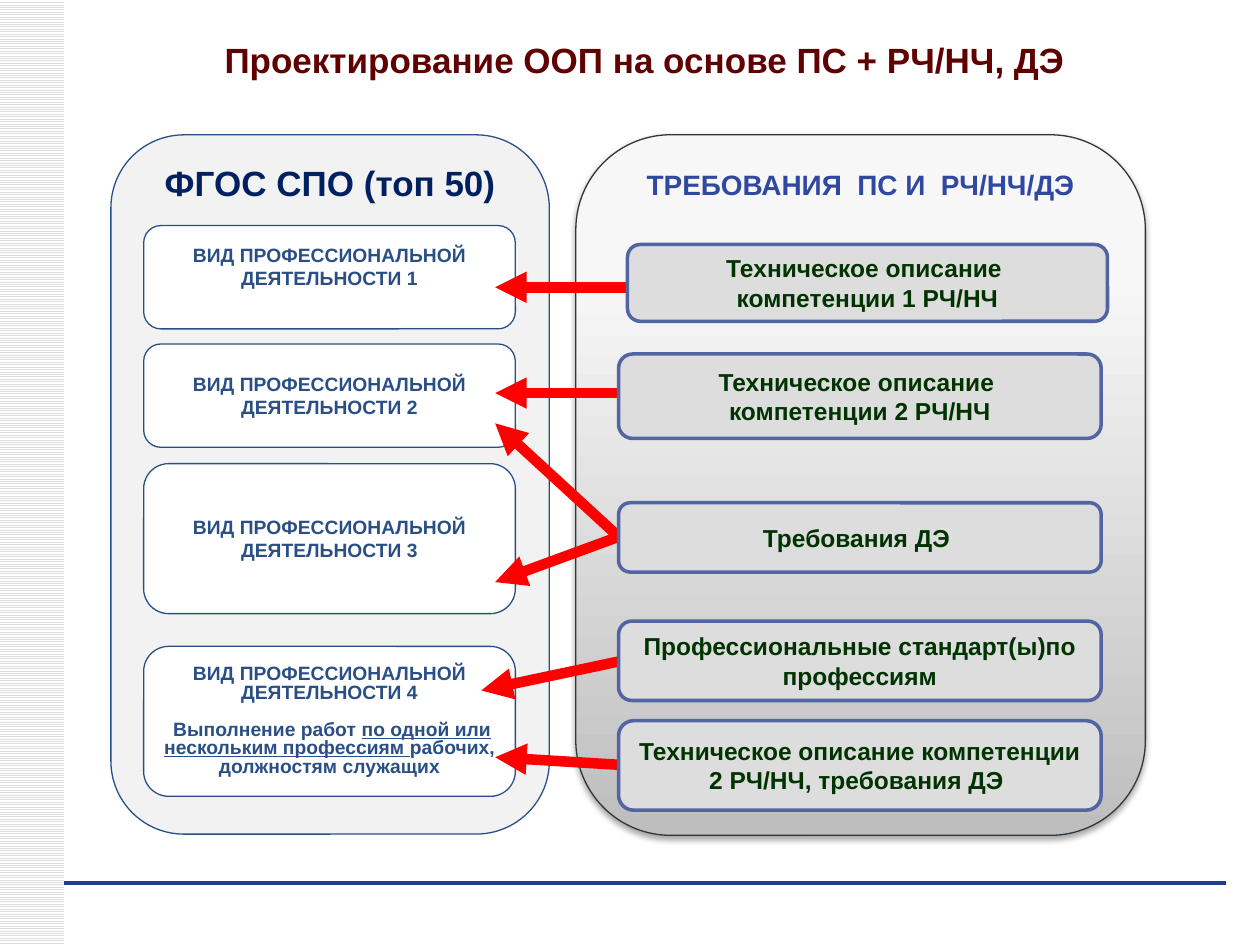
from pptx import Presentation
from pptx.dml.color import RGBColor
from pptx.enum.dml import MSO_PATTERN
from pptx.enum.shapes import MSO_CONNECTOR, MSO_SHAPE
from pptx.enum.text import MSO_ANCHOR as ANCHOR, PP_ALIGN as ALIGN
from pptx.oxml import parse_xml
from pptx.oxml.ns import nsdecls
from pptx.util import Inches, Pt

# Content: a paragraph is a list of (text, underlined) runs or a plain string
TITLE = "Проектирование ООП на основе ПС + РЧ/НЧ, ДЭ "
LEFT_HEAD = "ФГОС СПО (топ 50)"
RIGHT_HEAD = "ТРЕБОВАНИЯ  ПС И  РЧ/НЧ/ДЭ"
KIND = "ВИД ПРОФЕССИОНАЛЬНОЙ ДЕЯТЕЛЬНОСТИ "
WORK = [(" Выполнение работ ", False),
        ("по одной или нескольким профессиям ", True),
        ("рабочих, должностям служащих", False)]

# Left cards: top, height, paragraphs, text format
CARDS = [
    (1.79, 0.82, [KIND + "1"], {"foot": 0.22}),
    (2.73, 0.82, [KIND + "2"], {}),
    (3.68, 1.19, [KIND + "3"], {}),
    (5.13, 1.19, [KIND + "4", WORK], {"spacing": 0.8, "gap": 10.5}),
]
# Right boxes: left, top, width, height, paragraphs
DESC = "Техническое описание "
BOXES = [
    (4.98, 1.94, 3.81, 0.61, [DESC, "компетенции 1 РЧ/НЧ"]),
    (4.91, 2.81, 3.83, 0.67, [DESC, "компетенции 2 РЧ/НЧ"]),
    (4.91, 3.99, 3.83, 0.55, ["Требования ДЭ "]),
    (4.91, 4.93, 3.83, 0.63, ["Профессиональные стандарт(ы)по профессиям"]),
    (4.91, 5.72, 3.83, 0.71,
     [DESC + "компетенции 2 РЧ/НЧ, требования ДЭ "]),
]
# Arrows: index of the box, start y, end x, end y
ARROWS = [
    (0, 2.28, 3.93, 2.28),
    (1, 3.12, 3.93, 3.12),
    (2, 4.26, 3.93, 3.36),
    (2, 4.26, 3.93, 4.62),
    (3, 5.25, 3.82, 5.48),
    (4, 6.07, 3.93, 6.01),
]

deck = Presentation()
deck.slide_width, deck.slide_height = Inches(10), Inches(7.5)
slide = deck.slides.add_slide(deck.slide_layouts[6])


def rgb(code):
    return RGBColor.from_string(code)


def write(shape, paras, size, color, anchor=ANCHOR.MIDDLE, side=0.1,
          top=0.05, foot=None, spacing=None, gap=0):
    frame = shape.text_frame
    frame.word_wrap = True
    frame.vertical_anchor = anchor
    frame.margin_left = frame.margin_right = Inches(side)
    frame.margin_top = Inches(top)
    frame.margin_bottom = Inches(top if foot is None else foot)
    for i, runs in enumerate(paras):
        para = frame.add_paragraph() if i else frame.paragraphs[0]
        para.alignment = ALIGN.CENTER
        if spacing:
            para.line_spacing = spacing
        if i and gap:
            para.space_before = Pt(gap)
        for text, under in [(runs, False)] if isinstance(runs, str) else runs:
            run = para.add_run()
            run.text = text
            font = run.font
            font.name, font.size, font.bold = "Arial", Pt(size), True
            font.color.rgb = rgb(color)
            if under:
                font.underline = True


def block(x, y, w, h, fill, line, width=0.75, form=MSO_SHAPE.ROUNDED_RECTANGLE):
    shape = slide.shapes.add_shape(form, *map(Inches, (x, y, w, h)))
    shape.shadow.inherit = False
    if fill:
        shape.fill.solid()
        shape.fill.fore_color.rgb = rgb(fill)
    if line:
        shape.line.color.rgb = rgb(line)
        shape.line.width = Pt(width)
    else:
        shape.line.fill.background()
    return shape


def link(x1, y1, x2, y2, color, width, arrow=False):
    line = slide.shapes.add_connector(
        MSO_CONNECTOR.STRAIGHT, *map(Inches, (x1, y1, x2, y2)))
    line.line.color.rgb = rgb(color)
    line.line.width = Pt(width)
    if arrow:
        line.line._get_or_add_ln().append(
            parse_xml(f'<a:tailEnd {nsdecls("a")} type="triangle"/>'))
    line._element.spPr.append(parse_xml(f'<a:effectLst {nsdecls("a")}/>'))


# Side stripe and bottom rule
stripe = block(0, 0, 0.51, 7.5, None, None, form=MSO_SHAPE.RECTANGLE)
stripe.fill.patterned()
stripe.fill.pattern = MSO_PATTERN.LIGHT_HORIZONTAL
stripe.fill.fore_color.rgb = rgb("DDDDDD")
stripe.fill.back_color.rgb = rgb("FFFFFF")
link(0.51, 7.01, 9.73, 7.01, "1A3D97", 0)

# Title
title = slide.shapes.add_textbox(*map(Inches, (0.51, 0.29, 9.29, 0.39)))
write(title, [TITLE], 20, "600000", anchor=ANCHOR.TOP, spacing=0.9)

# Left panel with its cards
tight = {"side": 0.08, "top": 0.04}
panel = block(0.88, 1.07, 3.48, 5.55, "F2F2F2", "2A4F86")
write(panel, [LEFT_HEAD], 20, "002060", anchor=ANCHOR.TOP, **tight)
for y, h, paras, style in CARDS:
    card = block(1.14, y, 2.95, h, "FFFFFF", "2A4F86")
    write(card, paras, 11, "2A4F86", **tight, **style)

# Right panel: gradient from the bottom up, soft shadow below
panel = block(4.57, 1.07, 4.52, 5.56, None, "2F373D")
panel.fill.gradient()
panel.fill.gradient_angle = 90
for stop, (place, color) in zip(panel.fill.gradient_stops,
                                [(0, "BEBEBE"), (0.8, "F7F7F7")]):
    stop.position = place
    stop.color.rgb = rgb(color)
panel._element.spPr.find("{*}effectLst").append(parse_xml(
    f'<a:outerShdw {nsdecls("a")} blurRad="{Pt(3.1)}" dist="{Pt(1.8)}" '
    'dir="5400000" rotWithShape="0"><a:srgbClr val="000000">'
    '<a:alpha val="35000"/></a:srgbClr></a:outerShdw>'))
write(panel, [RIGHT_HEAD], 16, "3148A1", anchor=ANCHOR.TOP, **tight)

# Arrows, then the boxes they start from
for index, y1, x2, y2 in ARROWS:
    link(BOXES[index][0], y1, x2, y2, "FF0000", 6, arrow=True)
for x, y, w, h, paras in BOXES:
    write(block(x, y, w, h, "DDDDDD", "5065A1", 2), paras, 14, "003300")

deck.save("out.pptx")
